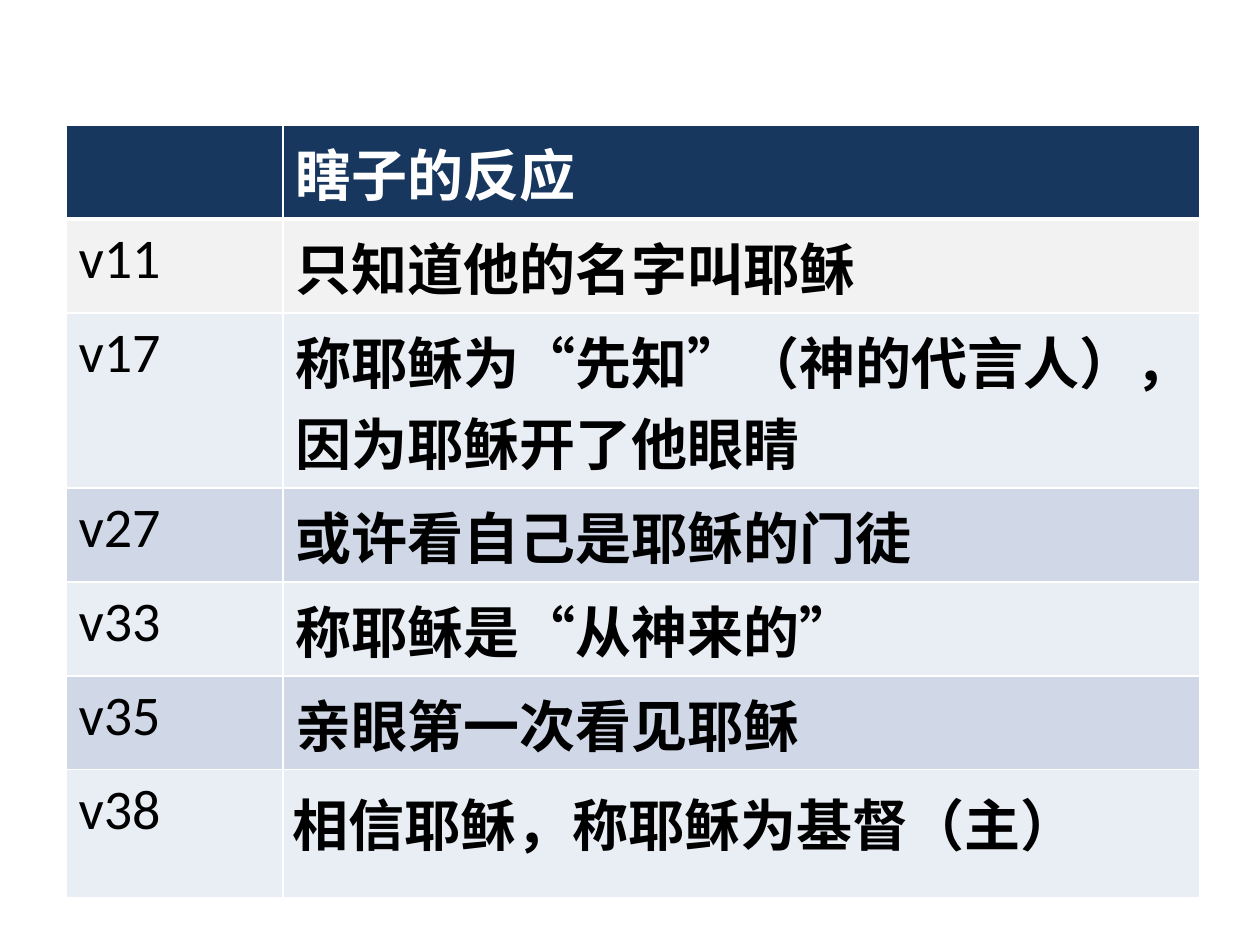
import dataclasses
import typing

import lxml.etree
import pptx
import pptx.dml.color
import pptx.enum.lang
import pptx.enum.text
import pptx.oxml.ns
import pptx.util

Cm, Pt = pptx.util.Cm, pptx.util.Pt


@dataclasses.dataclass(frozen=True)
class Theme:
    font: str = "Calibri"
    size: int = 32
    white: str = "FFFFFF"
    black: str = "000000"
    navy: str = "17375E"
    grey: str = "F2F2F2"
    light: str = "E9EDF4"
    mid: str = "D0D8E8"
    line: int = 1
    header_line: int = 3


class Row(typing.NamedTuple):
    verse: str
    reaction: str
    height: float  # cm
    fill: str


THEME = Theme()
COL_WIDTHS = (4.37, 18.49)
ROWS = (
    Row("", "瞎子的反应", 1.8, THEME.navy),
    Row("v11", "只知道他的名字叫耶稣", 1.8, THEME.grey),
    Row("v17", "称耶稣为“先知”（神的代言人），因为耶稣开了他眼睛", 2.59, THEME.light),
    Row("v27", "或许看自己是耶稣的门徒", 1.63, THEME.mid),
    Row("v33", "称耶稣是“从神来的”", 1.8, THEME.light),
    Row("v35", "亲眼第一次看见耶稣", 1.75, THEME.mid),
    Row("v38", "相信耶稣，称耶稣为基督（主）", 2.59, THEME.light),
)


def rgb(value: str) -> pptx.dml.color.RGBColor:
    return pptx.dml.color.RGBColor.from_string(value)


def set_borders(cell, top: int, bottom: int) -> None:
    """Add white cell borders; must run before the fill is set."""
    tc_pr = cell._tc.get_or_add_tcPr()
    qn = pptx.oxml.ns.qn
    widths = {"a:lnL": THEME.line, "a:lnR": THEME.line, "a:lnT": top, "a:lnB": bottom}
    for tag, width in widths.items():
        ln = lxml.etree.SubElement(tc_pr, qn(tag), w=str(Pt(width)))
        fill = lxml.etree.SubElement(ln, qn("a:solidFill"))
        lxml.etree.SubElement(fill, qn("a:srgbClr"), val=THEME.white)


def write_cell(cell, text: str, color: str, bold: bool) -> None:
    if not text:
        return
    p = cell.text_frame.paragraphs[0]
    r = p.add_run()
    r.text = text
    r.font.name = THEME.font
    r.font.size = Pt(THEME.size)
    r.font.bold = bold
    r.font.color.rgb = rgb(color)
    r.font.language_id = pptx.enum.lang.MSO_LANGUAGE_ID.SIMPLIFIED_CHINESE


def draw_table(s, rows: typing.Sequence[Row]) -> None:
    table = s.shapes.add_table(
        len(rows), len(COL_WIDTHS), Cm(1.33), Cm(2.52),
        Cm(sum(COL_WIDTHS)), Cm(sum(row.height for row in rows)),
    ).table
    for column, width in zip(table.columns, COL_WIDTHS):
        column.width = Cm(width)

    for i, row in enumerate(rows):
        table.rows[i].height = Cm(row.height)
        # The thick rule lies between the header and the first verse
        top = THEME.header_line if i == 1 else THEME.line
        bottom = THEME.header_line if i == 0 else THEME.line
        color = THEME.white if i == 0 else THEME.black
        for j, text in enumerate((row.verse, row.reaction)):
            cell = table.cell(i, j)
            set_borders(cell, top, bottom)
            cell.fill.solid()
            cell.fill.fore_color.rgb = rgb(row.fill)
            write_cell(cell, text, color, bold=j == 1)

    # The closing reaction has its own insets and spacing
    last = table.cell(len(rows) - 1, 1)
    last.margin_left = last.margin_right = Cm(0.19)
    last.margin_top = last.margin_bottom = 0
    p = last.text_frame.paragraphs[0]
    p.alignment = pptx.enum.text.PP_ALIGN.JUSTIFY
    p.line_spacing = 1.15
    p.space_after = Pt(10)


def main() -> None:
    prs = pptx.Presentation()
    prs.slide_width, prs.slide_height = Cm(25.4), Cm(19.05)
    s = prs.slides.add_slide(prs.slide_layouts[6])
    draw_table(s, ROWS)
    prs.save("out.pptx")


if __name__ == "__main__":
    main()
